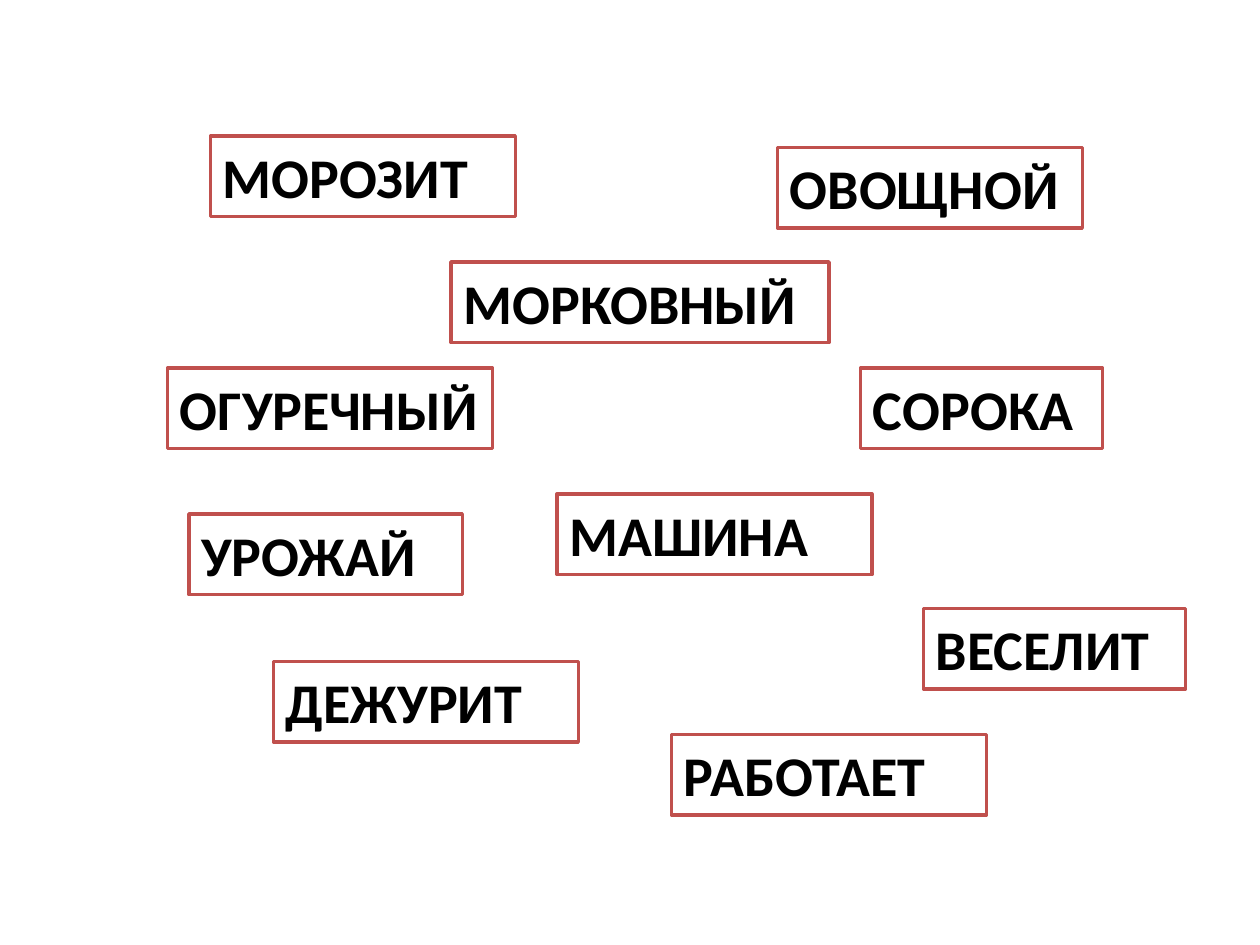
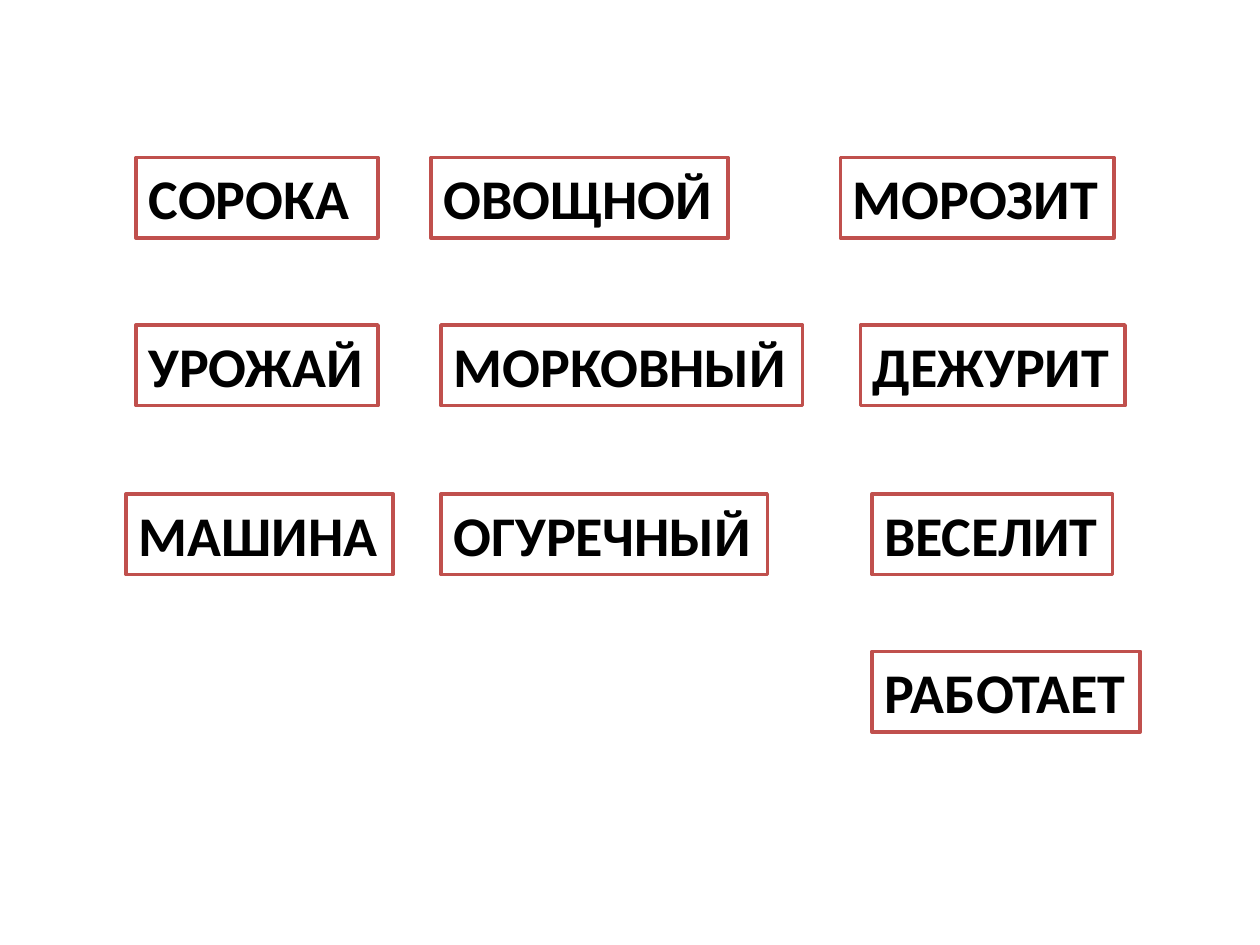
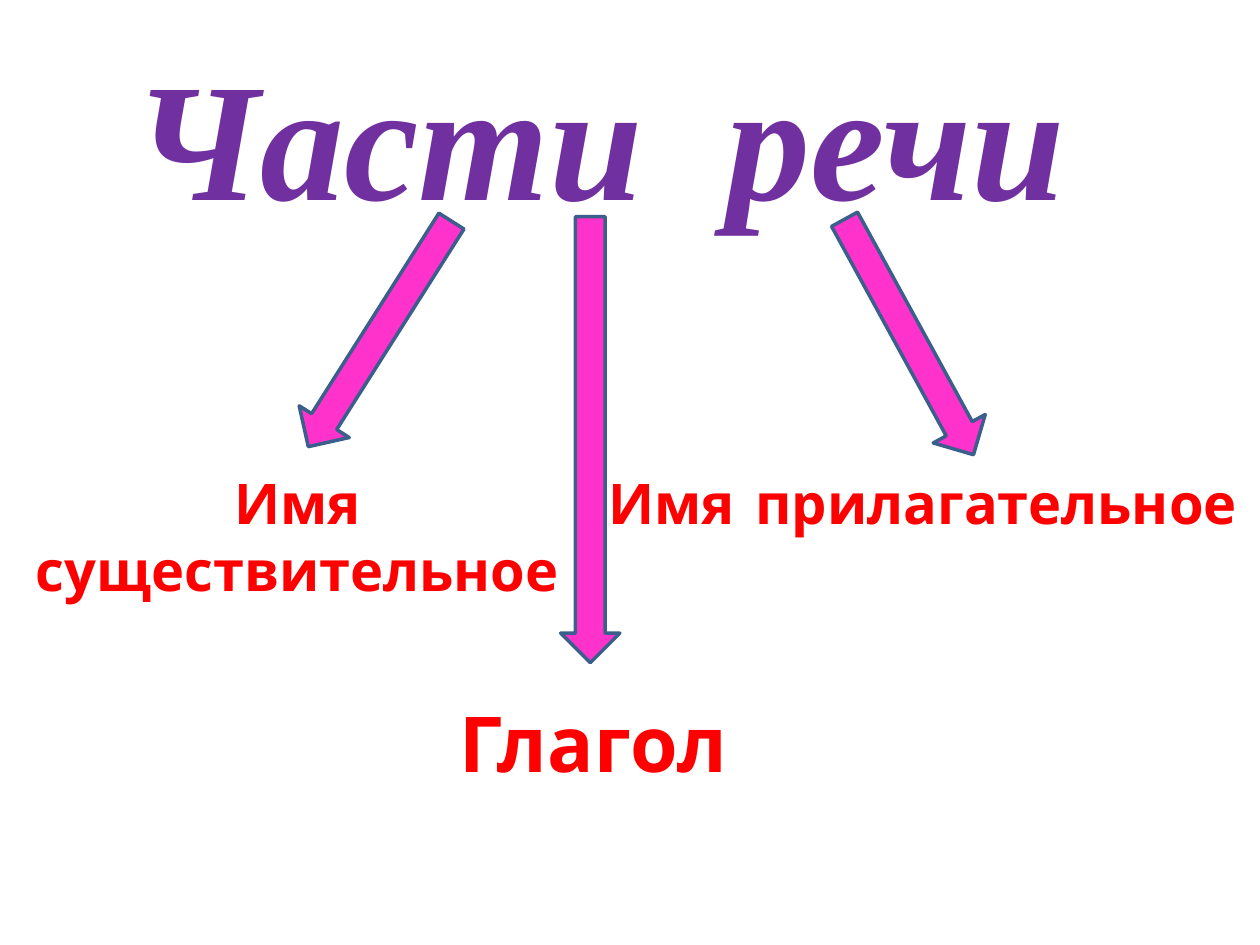
from pptx import Presentation
from pptx.dml.color import RGBColor
from pptx.enum.shapes import MSO_SHAPE
from pptx.enum.text import MSO_ANCHOR, MSO_AUTO_SIZE, PP_ALIGN
from pptx.util import Inches, Pt

WHITE = RGBColor(0xFF, 0xFF, 0xFF)
BLACK = RGBColor(0x00, 0x00, 0x00)
CARD_BORDER = RGBColor(0xC0, 0x50, 0x4D)
PURPLE = RGBColor(0x70, 0x30, 0xA0)
RED = RGBColor(0xFF, 0x00, 0x00)
PINK = RGBColor(0xFF, 0x33, 0xCC)
ARROW_BORDER = RGBColor(0x3A, 0x5F, 0x8C)

CARD_HEIGHT = 0.64
TITLE_ONLY, BLANK = 5, 6

SCATTERED_WORDS = [
    ("ОГУРЕЧНЫЙ", 1.33, 2.92, 2.58),
    ("ОВОЩНОЙ", 6.17, 1.17, 2.42),
    ("СОРОКА", 6.83, 2.92, 1.92),
    ("УРОЖАЙ", 1.5, 4.08, 2.17),
    ("РАБОТАЕТ", 5.33, 5.83, 2.5),
    ("ДЕЖУРИТ", 2.17, 5.25, 2.42),
    ("МОРОЗИТ", 1.67, 1.08, 2.42),
    ("МОРКОВНЫЙ", 3.58, 2.08, 3),
    ("ВЕСЕЛИТ", 7.33, 4.83, 2.08),
    ("МАШИНА", 4.42, 3.92, 2.5),
]

ROW_TOPS = [1.25, 2.58, 3.92, 5.17]
NOUNS = [("СОРОКА", 1.08, 1.92), ("УРОЖАЙ", 1.08, 1.92), ("МАШИНА", 1, 2.12)]
ADJECTIVES = [("ОВОЩНОЙ", 3.42, 2.36), ("МОРКОВНЫЙ", 3.5, 2.87), ("ОГУРЕЧНЫЙ", 3.5, 2.59)]
VERBS = [("МОРОЗИТ", 6.67, 2.17), ("ДЕЖУРИТ", 6.83, 2.1),
         ("ВЕСЕЛИТ", 6.92, 1.91), ("РАБОТАЕТ", 6.92, 2.13)]

PARTS_OF_SPEECH = [
    ("Имя существительное", 0, 3.67, 4.72, 1.18, 32),
    ("Имя прилагательное", 4.65, 3.67, 5.35, 1.18, 32),
    ("Глагол", 2.27, 5.47, 4.88, 0.84, 44),
]
ARROWS = [(2.78, 1.59, 2.12, 32.4), (6.98, 1.61, 2.13, 331.3), (4.45, 1.72, 3.54, 0)]


def write(shape, text, *, size, font, color, align=PP_ALIGN.CENTER, italic=False):
    """Put bold formatted text at the top of a shape."""
    frame = shape.text_frame
    frame.word_wrap = True
    frame.auto_size = MSO_AUTO_SIZE.NONE
    frame.vertical_anchor = MSO_ANCHOR.TOP
    paragraph = frame.paragraphs[0]
    paragraph.alignment = align
    run = paragraph.add_run()
    run.text = text
    run.font.size = Pt(size)
    run.font.name = font
    run.font.color.rgb = color
    run.font.bold = True
    run.font.italic = italic


def add_outlined(slide, preset, left, top, width, height, fill, border):
    """Add a filled preset shape with a two-point outline."""
    shape = slide.shapes.add_shape(
        preset, Inches(left), Inches(top), Inches(width), Inches(height))
    shape.shadow.inherit = False
    shape.fill.solid()
    shape.fill.fore_color.rgb = fill
    shape.line.color.rgb = border
    shape.line.width = Pt(2)
    return shape


def add_word_card(slide, word, left, top, width):
    """Add a bordered card that holds one word."""
    card = add_outlined(slide, MSO_SHAPE.RECTANGLE, left, top, width, CARD_HEIGHT,
                        WHITE, CARD_BORDER)
    card.text_frame.margin_right = 0
    write(card, word, size=32, font="Calibri", color=BLACK, align=PP_ALIGN.LEFT)


def add_label(slide, text, left, top, width, height, size):
    """Add the red name of a part of speech."""
    label = slide.shapes.add_textbox(
        Inches(left), Inches(top), Inches(width), Inches(height))
    write(label, text, size=size, font="Comic Neue", color=RED)


def add_title(slide, text, left, top, width, height):
    """Place and format the slide title."""
    title = slide.shapes.title
    title.left, title.top = Inches(left), Inches(top)
    title.width, title.height = Inches(width), Inches(height)
    write(title, text, size=96, font="Times New Roman", color=PURPLE, italic=True)


def add_arrow(slide, left, top, length, rotation):
    """Add a pink arrow that leads from the title to a label."""
    arrow = add_outlined(slide, MSO_SHAPE.DOWN_ARROW, left, top, 0.47, length,
                         PINK, ARROW_BORDER)
    arrow.rotation = rotation


def main():
    """Build the three slides and save them."""
    deck = Presentation()
    deck.slide_width, deck.slide_height = Inches(10), Inches(7.5)

    mixed = deck.slides.add_slide(deck.slide_layouts[BLANK])
    for word, left, top, width in SCATTERED_WORDS:
        add_word_card(mixed, word, left, top, width)

    sorted_words = deck.slides.add_slide(deck.slide_layouts[BLANK])
    for group in (NOUNS, ADJECTIVES, VERBS):
        for (word, left, width), top in zip(group, ROW_TOPS):
            add_word_card(sorted_words, word, left, top, width)

    scheme = deck.slides.add_slide(deck.slide_layouts[TITLE_ONLY])
    add_title(scheme, "Части  речи", 0.43, 0.21, 8.66, 1.72)
    for part in PARTS_OF_SPEECH:
        add_label(scheme, *part)
    for arrow in ARROWS:
        add_arrow(scheme, *arrow)

    deck.save("out.pptx")


if __name__ == "__main__":
    main()
